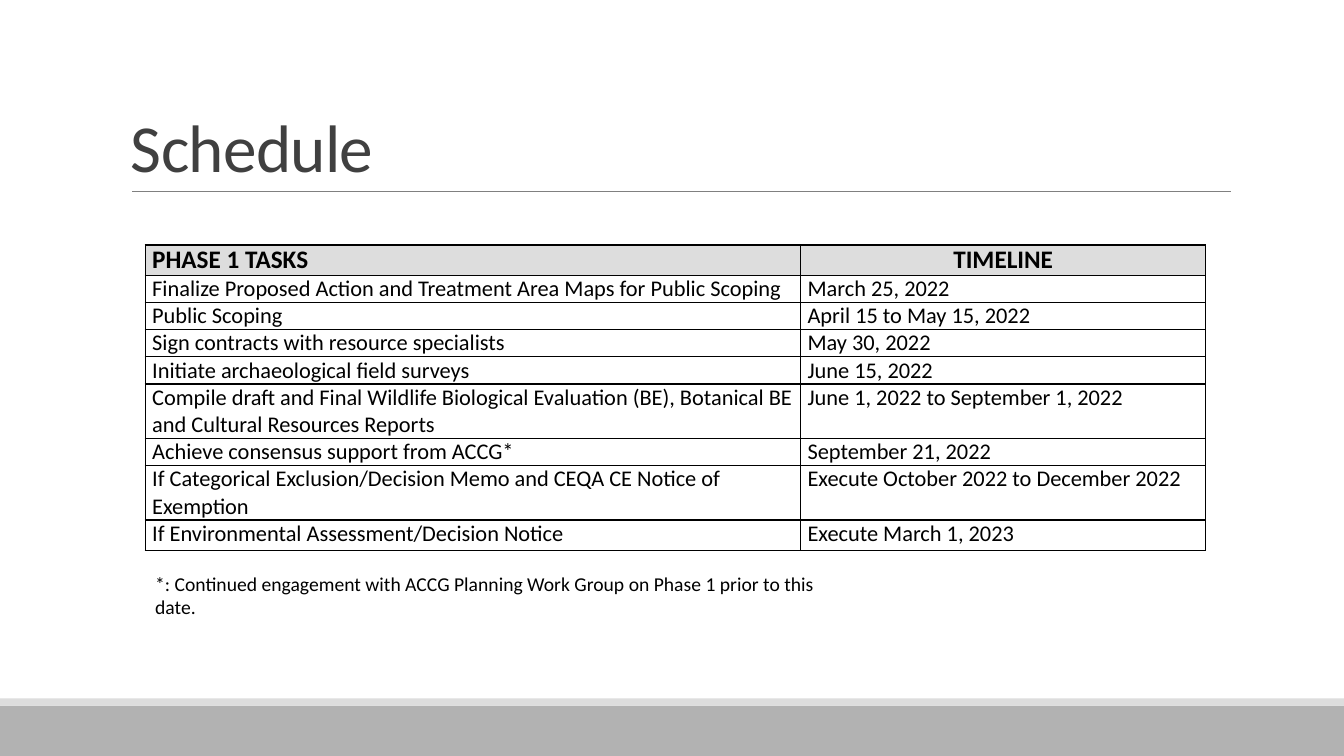
from typing import NamedTuple

from lxml.etree import SubElement
from pptx import Presentation
from pptx.dml.color import RGBColor
from pptx.enum.shapes import MSO_CONNECTOR as Connector, MSO_SHAPE as Shape
from pptx.enum.text import MSO_ANCHOR as Anchor, PP_ALIGN as Align
from pptx.oxml import parse_xml
from pptx.oxml.ns import nsdecls, qn
from pptx.util import Inches, Pt

FONT = "Calibri"
COLORS = {
    "band": "B2B2B2",
    "stripe": "DDDDDD",
    "rule": "808080",
    "title": "404040",
    "text": "000000",
    "header": "DDDDDD",
    "cell": "FFFFFF",
}


class Bar(NamedTuple):
    top: float
    height: float
    color: str


class Task(NamedTuple):
    name: str
    timeline: str
    height: float = 0.27


BARS = [Bar(7, 0.5, "band"), Bar(6.93, 0.07, "stripe")]
COLUMN_WIDTHS = [6.5, 4.02]
TASKS = [
    Task("PHASE 1 TASKS", "TIMELINE", 0.3),
    Task("Finalize Proposed Action and Treatment Area Maps for Public Scoping", "March 25, 2022"),
    Task("Public Scoping", "April 15 to May 15, 2022"),
    Task("Sign contracts with resource specialists", "May 30, 2022"),
    Task("Initiate archaeological field surveys", "June 15, 2022"),
    Task("Compile draft and Final Wildlife Biological Evaluation (BE), Botanical BE "
         "and Cultural Resources Reports", "June 1, 2022 to September 1, 2022", 0.54),
    Task("Achieve consensus support from ACCG*", "September 21, 2022"),
    Task("If Categorical Exclusion/Decision Memo and CEQA CE Notice of Exemption",
         "Execute October 2022 to December 2022", 0.54),
    Task("If Environmental Assessment/Decision Notice", "Execute March 1, 2023", 0.3),
]


def rgb(name: str) -> RGBColor:
    return RGBColor.from_string(COLORS[name])


def style_paragraph(para, size: float, color: str = "text", bold: bool = False) -> None:
    para.font.name = FONT
    para.font.size = Pt(size)
    para.font.bold = bold
    para.font.color.rgb = rgb(color)


def add_bar(page, bar: Bar, width: int) -> None:
    shape = page.shapes.add_shape(Shape.RECTANGLE, 0, Inches(bar.top), width, Inches(bar.height))
    shape.shadow.inherit = False
    shape.fill.solid()
    shape.fill.fore_color.rgb = rgb(bar.color)
    shape.line.fill.background()


def add_rule(page) -> None:
    """Draw the thin line under the title."""
    rule = page.shapes.add_connector(
        Connector.STRAIGHT, Inches(1.31), Inches(1.9), Inches(12.21), Inches(1.9))
    rule.line.color.rgb = rgb("rule")
    rule.line.width = Pt(0.5)
    SubElement(rule._element.spPr, qn("a:effectLst"))


def add_text(page, text: str, left: float, top: float, width: float, height: float,
             size: float, color: str, anchor: Anchor = Anchor.TOP):
    box = page.shapes.add_textbox(Inches(left), Inches(top), Inches(width), Inches(height))
    box.text_frame.word_wrap = True
    box.text_frame.vertical_anchor = anchor
    para = box.text_frame.paragraphs[0]
    para.text = text
    style_paragraph(para, size, color)
    return para


def add_title(page) -> None:
    para = add_text(page, "Schedule", 1.2, 0.31, 11, 1.59, 48, "title", Anchor.BOTTOM)
    para.line_spacing = 0.85
    para.runs[0].font._element.set("spc", "-50")


def add_borders(cell) -> None:
    properties = cell._tc.get_or_add_tcPr()
    for index, side in enumerate(("lnL", "lnR", "lnT", "lnB")):
        properties.insert(index, parse_xml(
            f'<a:{side} {nsdecls("a")} w="{Pt(1)}"><a:solidFill>'
            f'<a:srgbClr val="{COLORS["text"]}"/></a:solidFill></a:{side}>'))


def fill_cell(cell, text: str, is_header: bool) -> None:
    cell.margin_left = cell.margin_right = Inches(0.07)
    cell.margin_top = cell.margin_bottom = 0
    cell.fill.solid()
    cell.fill.fore_color.rgb = rgb("header" if is_header else "cell")
    add_borders(cell)
    cell.text = text
    style_paragraph(cell.text_frame.paragraphs[0], 18 if is_header else 16, bold=is_header)


def add_schedule(page) -> None:
    height = sum(task.height for task in TASKS)
    table = page.shapes.add_table(
        len(TASKS), len(COLUMN_WIDTHS), Inches(1.44), Inches(2.43),
        Inches(sum(COLUMN_WIDTHS)), Inches(height)).table
    table.horz_banding = False
    for column, width in zip(table.columns, COLUMN_WIDTHS):
        column.width = Inches(width)
    for index, (row, task) in enumerate(zip(table.rows, TASKS)):
        row.height = Inches(task.height)
        for cell, text in zip(row.cells, (task.name, task.timeline)):
            fill_cell(cell, text, is_header=index == 0)
    table.cell(0, 1).text_frame.paragraphs[0].alignment = Align.CENTER


def main() -> None:
    deck = Presentation()
    deck.slide_width, deck.slide_height = Inches(13.33), Inches(7.5)
    page = deck.slides.add_slide(deck.slide_layouts[6])
    for bar in BARS:
        add_bar(page, bar, deck.slide_width)
    add_rule(page)
    add_title(page)
    add_schedule(page)
    add_text(page, "*: Continued engagement with ACCG Planning Work Group on Phase 1 "
             "prior to this date.", 1.44, 5.62, 7.15, 0.34, 14, "text")
    deck.save("out.pptx")


if __name__ == "__main__":
    main()
